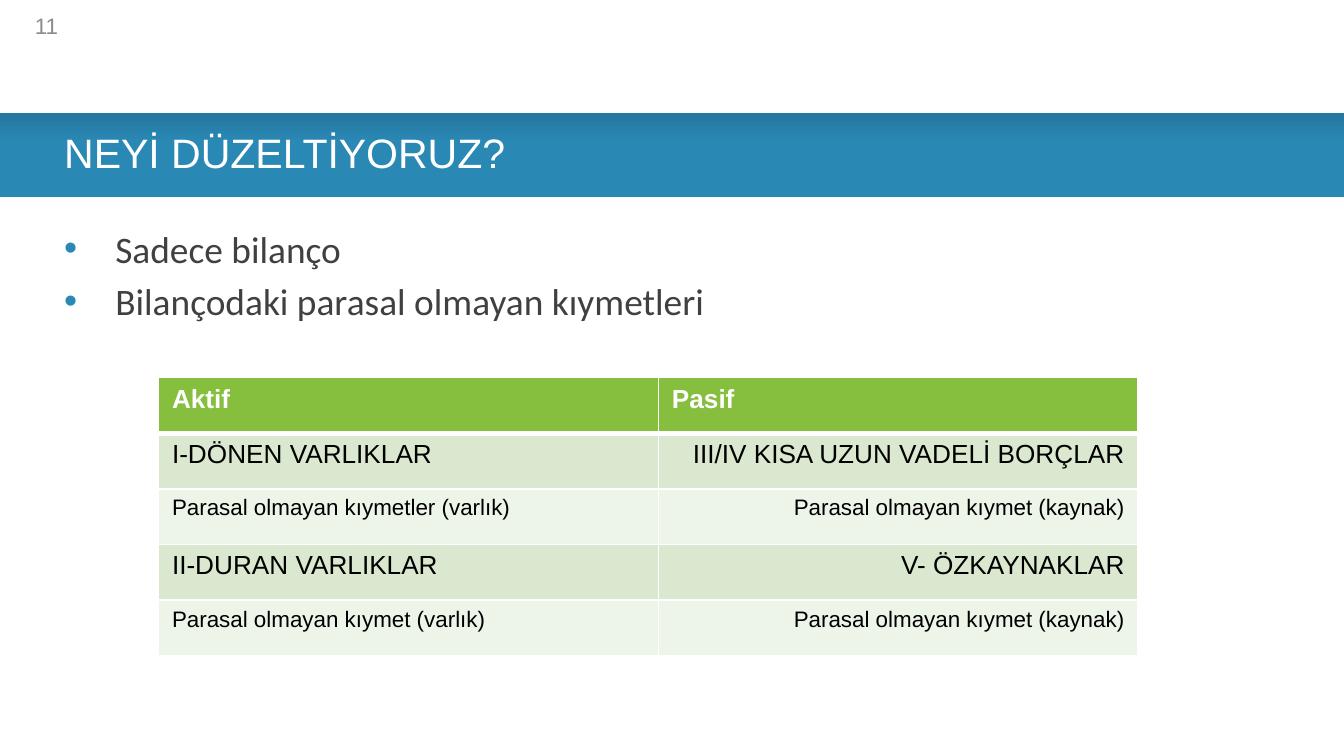
from dataclasses import dataclass
from typing import NamedTuple

from lxml.etree import SubElement
from pptx import Presentation
from pptx.dml.color import RGBColor as Rgb
from pptx.enum.shapes import MSO_SHAPE as Shape
from pptx.enum.text import MSO_ANCHOR as Anchor, PP_ALIGN as Align
from pptx.oxml.ns import qn
from pptx.util import Inches, Pt


@dataclass(frozen=True)
class Theme:
    heading_font: str = "Arial"
    body_font: str = "Calibri"
    title_size: int = 22
    body_size: int = 20
    group_size: int = 14
    detail_size: int = 12
    white: str = "FFFFFF"
    black: str = "000000"
    body_text: str = "404040"
    number: str = "8C8C8C"
    bullet: str = "2A89B4"
    band_top: str = "24779F"
    band_base: str = "2A88B4"
    header_fill: str = "86BE3D"
    group_fill: str = "D9E8CE"
    detail_fill: str = "EDF4E8"


class Area(NamedTuple):
    left: float
    top: float
    width: float
    height: float

    def lengths(self) -> list:
        return [Inches(value) for value in self]


class Style(NamedTuple):
    font: str
    size: int
    color: str
    bold: bool = False


class RowKind(NamedTuple):
    style: Style
    fill: str
    right_align: Align
    top_line: int = 1
    bottom_line: int = 1


class BalanceRow(NamedTuple):
    kind: RowKind
    assets: str
    liabilities: str


THEME = Theme()
TITLE = Style(THEME.heading_font, THEME.title_size, THEME.white)
BODY = Style(THEME.body_font, THEME.body_size, THEME.body_text)
NUMBER = Style(THEME.heading_font, THEME.detail_size, THEME.number)
HEADER = RowKind(Style(THEME.heading_font, THEME.group_size, THEME.white, True),
                 THEME.header_fill, Align.LEFT, bottom_line=3)
GROUP = RowKind(Style(THEME.heading_font, THEME.group_size, THEME.black),
                THEME.group_fill, Align.RIGHT)
FIRST_GROUP = GROUP._replace(top_line=3)
DETAIL = RowKind(Style(THEME.heading_font, THEME.detail_size, THEME.black),
                 THEME.detail_fill, Align.RIGHT)

BULLETS = ["Sadece bilanço", "Bilançodaki parasal olmayan kıymetleri"]
BALANCE = [
    BalanceRow(HEADER, "Aktif", "Pasif"),
    BalanceRow(FIRST_GROUP, "I-DÖNEN VARLIKLAR", "III/IV KISA UZUN VADELİ BORÇLAR"),
    BalanceRow(DETAIL, "Parasal olmayan kıymetler (varlık)", "Parasal olmayan kıymet (kaynak)"),
    BalanceRow(GROUP, "II-DURAN VARLIKLAR", "V- ÖZKAYNAKLAR"),
    BalanceRow(DETAIL, "Parasal olmayan kıymet (varlık)", "Parasal olmayan kıymet (kaynak)"),
]
COLUMN_WIDTHS = [3.72, 3.57]


def style_para(para, style: Style, align: Align = Align.LEFT) -> None:
    para.alignment = align
    for span in para.runs:
        span.font.name = style.font
        span.font.size = Pt(style.size)
        span.font.bold = style.bold
        span.font.color.rgb = Rgb.from_string(style.color)


def add_text(page, area: Area, text: str, style: Style,
             align: Align = Align.LEFT, anchor: Anchor = Anchor.MIDDLE):
    frame = page.shapes.add_textbox(*area.lengths()).text_frame
    frame.word_wrap = True
    frame.vertical_anchor = anchor
    frame.text = text
    for para in frame.paragraphs:
        style_para(para, style, align)
    return frame


def add_bullet(para) -> None:
    props = para._p.get_or_add_pPr()
    indent = Inches(0.38)
    props.set("marL", str(indent))
    props.set("indent", str(-indent))
    color = SubElement(props, qn("a:buClr"))
    SubElement(color, qn("a:srgbClr"), val=THEME.bullet)
    SubElement(props, qn("a:buFont"), typeface=THEME.heading_font)
    SubElement(props, qn("a:buChar"), char="•")


def add_band(page, area: Area) -> None:
    band = page.shapes.add_shape(Shape.RECTANGLE, *area.lengths())
    band.shadow.inherit = False
    band.line.fill.background()
    band.fill.gradient()
    band.fill.gradient_angle = 270
    stops = [(0, THEME.band_top), (0.34, THEME.band_base)]
    for stop, (position, color) in zip(band.fill.gradient_stops, stops):
        stop.position = position
        stop.color.rgb = Rgb.from_string(color)


def set_borders(cell, kind: RowKind) -> None:
    props = cell._tc.get_or_add_tcPr()
    widths = {"lnL": 1, "lnR": 1, "lnT": kind.top_line, "lnB": kind.bottom_line}
    for side, width in widths.items():
        line = SubElement(props, qn(f"a:{side}"), w=str(Pt(width)))
        fill = SubElement(line, qn("a:solidFill"))
        SubElement(fill, qn("a:srgbClr"), val=THEME.white)


def fill_cell(cell, text: str, kind: RowKind, align: Align) -> None:
    set_borders(cell, kind)
    cell.fill.solid()
    cell.fill.fore_color.rgb = Rgb.from_string(kind.fill)
    cell.text_frame.text = text
    style_para(cell.text_frame.paragraphs[0], kind.style, align)


def add_balance_table(page, area: Area, rows: list[BalanceRow]) -> None:
    table = page.shapes.add_table(len(rows), len(COLUMN_WIDTHS), *area.lengths()).table
    table.horz_banding = False
    for column, width in zip(table.columns, COLUMN_WIDTHS):
        column.width = Inches(width)
    for index, row in enumerate(rows):
        fill_cell(table.cell(index, 0), row.assets, row.kind, Align.LEFT)
        fill_cell(table.cell(index, 1), row.liabilities, row.kind, row.kind.right_align)


def main() -> None:
    # Widescreen page, 16:9
    deck = Presentation()
    deck.slide_width, deck.slide_height = Inches(10), Inches(10 * 9 / 16)
    page = deck.slides.add_slide(deck.slide_layouts[6])

    # Title band
    add_band(page, Area(0, 0.84, 10, 0.63))

    # Bullet list
    body = add_text(page, Area(0.38, 1.63, 9, 3.55), "\n".join(BULLETS), BODY,
                    anchor=Anchor.TOP)
    for index, para in enumerate(body.paragraphs):
        add_bullet(para)
        para.space_before = Pt(4 if index else 0)

    # Title
    add_text(page, Area(0.38, 0.87, 9, 0.53), "NEYİ DÜZELTİYORUZ?", TITLE)

    # Balance sheet table
    add_balance_table(page, Area(1.18, 2.81, sum(COLUMN_WIDTHS), 2.07), BALANCE)

    # Page number
    add_text(page, Area(0.04, 0.04, 0.49, 0.3), "11", NUMBER, Align.RIGHT)

    deck.save("out.pptx")


if __name__ == "__main__":
    main()
